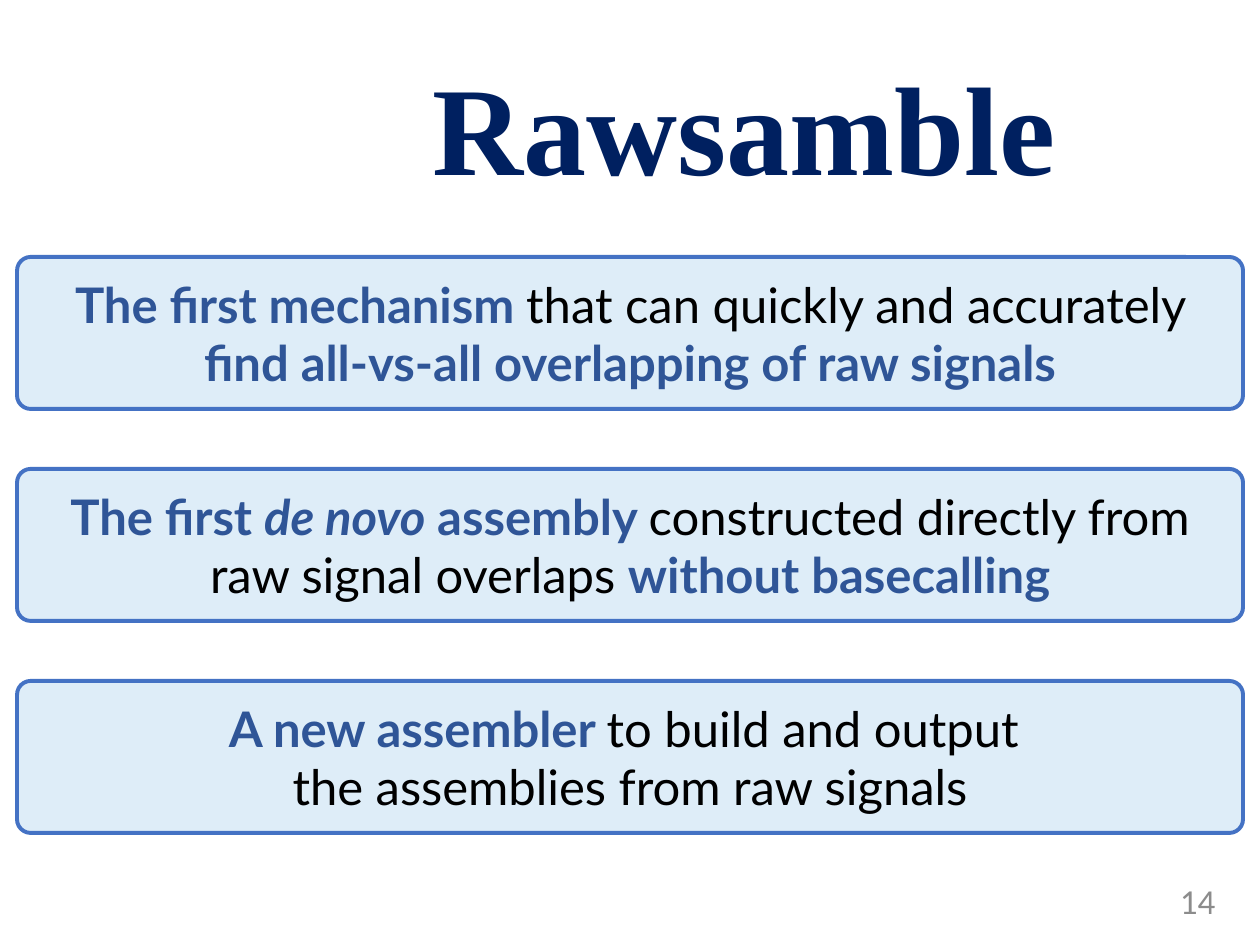
"""Build the Rawsamble contributions slide."""
from pptx import Presentation
from pptx.dml.color import RGBColor
from pptx.enum.shapes import MSO_SHAPE as Shape
from pptx.enum.text import MSO_ANCHOR as Anchor, MSO_AUTO_SIZE as Auto, PP_ALIGN as Align
from pptx.util import Emu, Pt

NAVY = RGBColor(0x00, 0x20, 0x60)
BLUE = RGBColor(0x2F, 0x55, 0x97)
EDGE = RGBColor(0x44, 0x72, 0xC4)
PALE = RGBColor(0xDE, 0xED, 0xF8)
GRAY = RGBColor(0x8C, 0x8C, 0x8C)
BLACK = RGBColor(0x00, 0x00, 0x00)

HEAD = {"name": "Times New Roman", "size": Pt(72), "bold": True}
NUM = {"name": "Calibri", "size": Pt(20)}
BODY = {"name": "Lato", "size": Pt(28)}
STRONG = {**BODY, "bold": True}
ITALIC = {**STRONG, "italic": True}

TITLE = [[("Rawsamble", HEAD, NAVY)]]
PAGE = [[("14", NUM, GRAY)]]
CLAIMS = [
    [[("The first mechanism ", STRONG, BLUE),
      ("that can quickly and accurately ", BODY, BLACK),
      ("find all-vs-all overlapping of raw signals", STRONG, BLUE)]],
    [[("The first ", STRONG, BLUE),
      ("de novo", ITALIC, BLUE),
      (" assembly ", STRONG, BLUE),
      ("constructed directly from raw signal overlaps ", BODY, BLACK),
      ("without basecalling", STRONG, BLUE)]],
    [[("A new assembler ", STRONG, BLUE),
      ("to build and output ", BODY, BLACK)],
     [("the assemblies from raw signals", BODY, BLACK)]],
]

TITLE_AT = (425, 49, 639, 152)
PAGE_AT = (1092, 876, 136, 50)
LEFT, TOP, WIDE, HIGH, PITCH = 17, 257, 1226, 152, 212


def px(n):
    return Emu(round(n * 914400 / 126))


def place(shape, spot):
    for key, n in zip(("left", "top", "width", "height"), spot):
        setattr(shape, key, px(n))


def write(shape, paras, align, anchor):
    frame = shape.text_frame
    frame.word_wrap = True
    frame.auto_size = Auto.NONE
    frame.vertical_anchor = anchor
    for i, runs in enumerate(paras):
        para = frame.add_paragraph() if i else frame.paragraphs[0]
        para.alignment = align
        for text, style, color in runs:
            run = para.add_run()
            run.text = text
            for key, value in style.items():
                setattr(run.font, key, value)
            run.font.color.rgb = color
    return frame


def main():
    deck = Presentation()
    deck.slide_width, deck.slide_height = px(1260), px(945)
    slide = deck.slides.add_slide(deck.slide_layouts[5])
    shapes = slide.shapes

    place(shapes.title, TITLE_AT)
    frame = write(shapes.title, TITLE, Align.CENTER, Anchor.TOP)
    for side in ("left", "top", "right", "bottom"):
        setattr(frame, f"margin_{side}", 0)

    for i, claim in enumerate(CLAIMS):
        spot = map(px, (LEFT, TOP + i * PITCH, WIDE, HIGH))
        box = shapes.add_shape(Shape.ROUNDED_RECTANGLE, *spot)
        box.adjustments[0] = 0.09
        box.shadow.inherit = False
        box.fill.solid()
        box.fill.fore_color.rgb = PALE
        box.line.color.rgb = EDGE
        box.line.width = Pt(2.25)
        write(box, claim, Align.CENTER, Anchor.MIDDLE)

    page = shapes.add_textbox(*map(px, PAGE_AT))
    write(page, PAGE, Align.RIGHT, Anchor.MIDDLE)
    deck.save("out.pptx")


if __name__ == "__main__":
    main()
